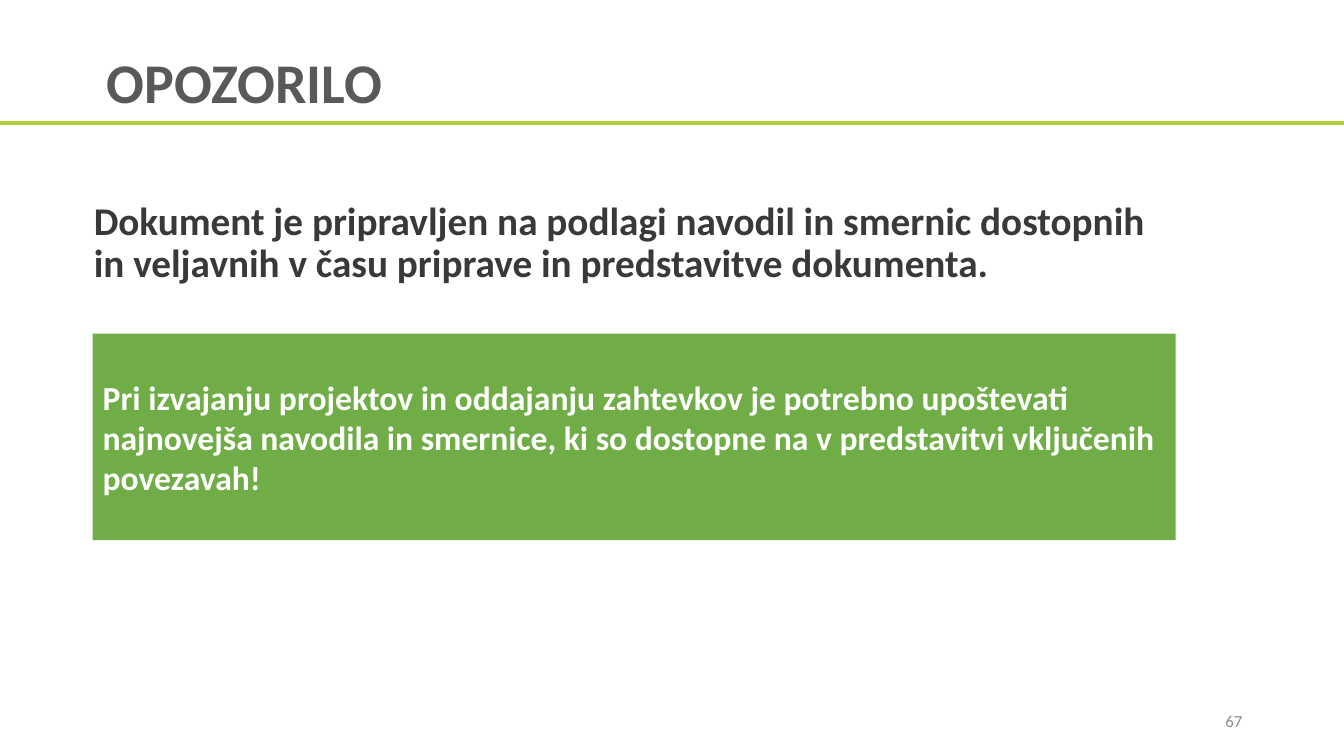
import pptx
import pptx.util
import pptx.dml.color
import pptx.enum.shapes
import pptx.enum.text
import lxml.etree

# Content
TITLE = "OPOZORILO"
BASIS = ("Dokument je pripravljen na podlagi navodil in smernic dostopnih "
         "in veljavnih v času priprave in predstavitve dokumenta.")
WARNING = ("Pri izvajanju projektov in oddajanju zahtevkov je potrebno upoštevati "
           "najnovejša navodila in smernice, ki so dostopne na v predstavitvi "
           "vključenih povezavah!")
PAGE = "67"

# Design: boxes are left, top, width, height in inches
COLORS = {"title": "595959", "body": "3B3838", "white": "FFFFFF",
          "green": "70AD47", "rule": "B0D03B", "page": "8C8C8C"}
FONT = "Calibri"
W, H = 13.33, 7.5
BOXES = {"title": (0.96, 0.12, 11.5, 1.45),
         "body": (0.83, 1.95, 10.96, 4.76),
         "warning": (0.92, 3.31, 10.74, 2.05),
         "page": (9.42, 6.95, 3, 0.4)}
RULE_Y = 1.22

Inches, Pt = pptx.util.Inches, pptx.util.Pt
ALIGN = pptx.enum.text.PP_ALIGN
ANCHOR = pptx.enum.text.MSO_ANCHOR
DRAWING = "{http://schemas.openxmlformats.org/drawingml/2006/main}"


def rgb(name):
    return pptx.dml.color.RGBColor.from_string(COLORS[name])


def box(name):
    return [Inches(v) for v in BOXES[name]]


def place(sp, name):
    sp.left, sp.top, sp.width, sp.height = box(name)
    return sp


def write(sp, text, size, color, bold=True, align=ALIGN.LEFT,
          anchor=ANCHOR.MIDDLE, spacing=1.0, bullet=True):
    tf = sp.text_frame
    tf.word_wrap = True
    tf.auto_size = pptx.enum.text.MSO_AUTO_SIZE.NONE
    tf.vertical_anchor = anchor
    p = tf.paragraphs[0]
    p.alignment = align
    p.line_spacing = spacing
    p.space_before = Pt(0)
    if not bullet:
        pPr = p._p.get_or_add_pPr()
        pPr.set("marL", "0")
        pPr.set("indent", "0")
        lxml.etree.SubElement(pPr, DRAWING + "buNone")
    r = p.add_run()
    r.text = text
    r.font.name, r.font.size, r.font.bold = FONT, Pt(size), bold
    r.font.color.rgb = rgb(color)


prs = pptx.Presentation()
prs.slide_width, prs.slide_height = Inches(W), Inches(H)
s = prs.slides.add_slide(prs.slide_layouts[1])

# Title and body
write(place(s.shapes.title, "title"), TITLE, 40, "title", spacing=0.9)
write(place(s.placeholders[1], "body"), BASIS, 28, "body",
      anchor=ANCHOR.TOP, spacing=0.9, bullet=False)

# Warning panel
panel = s.shapes.add_shape(pptx.enum.shapes.MSO_SHAPE.RECTANGLE, *box("warning"))
panel.shadow.inherit = False
panel.fill.solid()
panel.fill.fore_color.rgb = rgb("green")
panel.line.fill.background()
write(panel, WARNING, 24, "white")

# Page number
write(s.shapes.add_textbox(*box("page")), PAGE, 12, "page",
      bold=False, align=ALIGN.RIGHT)

# Rule under the title
rule = s.shapes.add_connector(pptx.enum.shapes.MSO_CONNECTOR.STRAIGHT,
                              0, Inches(RULE_Y), Inches(W), Inches(RULE_Y))
rule.line.color.rgb = rgb("rule")
rule.line.width = Pt(3)
lxml.etree.SubElement(rule._element.spPr, DRAWING + "effectLst")

prs.save("out.pptx")
